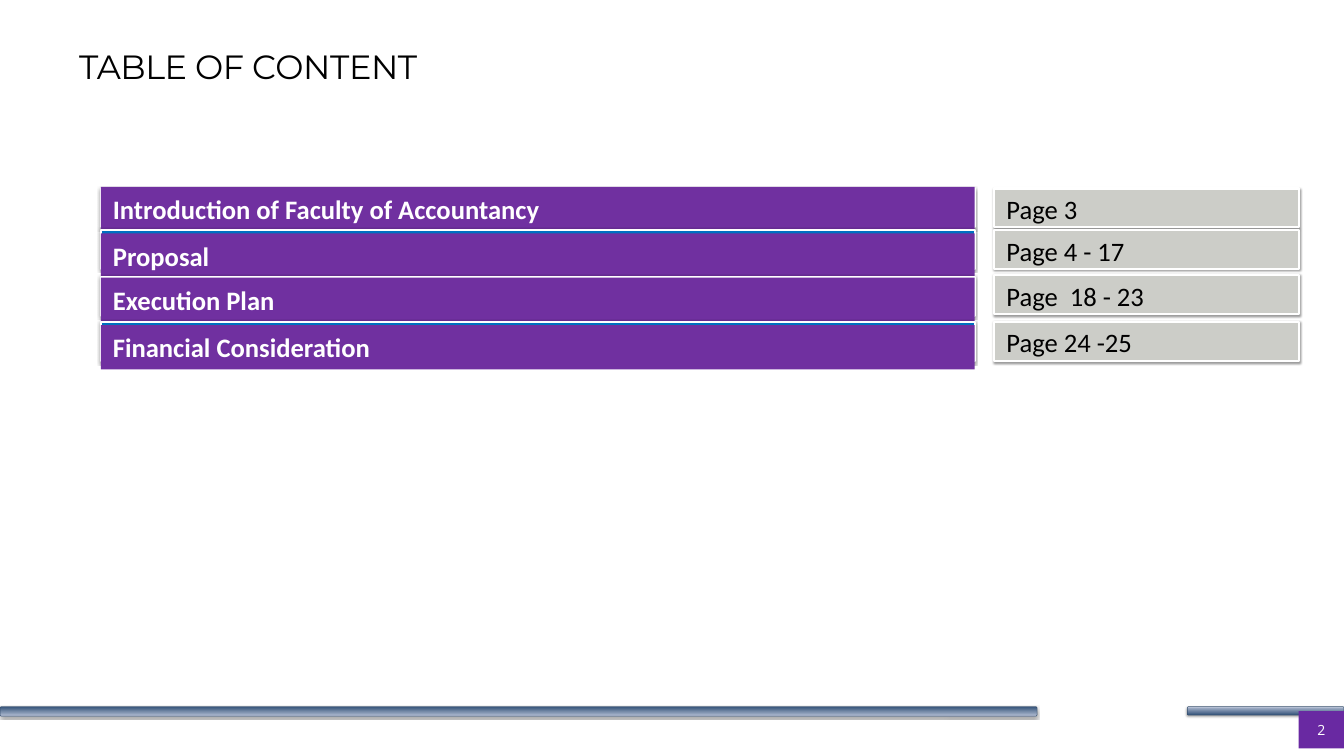
from dataclasses import dataclass

from lxml.etree import SubElement
from pptx import Presentation
from pptx.dml.color import RGBColor
from pptx.enum.shapes import MSO_SHAPE as Shape
from pptx.enum.text import MSO_ANCHOR as Anchor, MSO_AUTO_SIZE as AutoSize, PP_ALIGN as Align
from pptx.oxml.ns import qn
from pptx.util import Pt

PX = 9144  # 100 px to the inch


@dataclass(frozen=True)
class Theme:
    purple: str = "7030A0"
    badge: str = "6929A2"
    blue: str = "0070C0"
    grey: str = "CCCDC8"
    white: str = "FFFFFF"
    black: str = "000000"
    bar_dark: str = "325178"
    bar_light: str = "B4BFD4"
    bar_edge: str = "37506F"
    title_font: str = "Montserrat"
    body_font: str = "Calibri"
    number_font: str = "Open Sans"
    title_size: int = 48
    body_size: int = 38
    number_size: int = 20


theme = Theme()
color = RGBColor.from_string

deck = Presentation()
deck.slide_width, deck.slide_height = 2667 * PX, 1500 * PX
page = deck.slides.add_slide(deck.slide_layouts[5])


def add_box(bounds, fill=None, edge=None, edge_width=3, shadow=None, kind=Shape.RECTANGLE):
    """Add a shape; shadow is (opacity in percent, distance in EMU)."""
    box = page.shapes.add_shape(kind, *(value * PX for value in bounds))
    box.shadow.inherit = False
    if fill:
        box.fill.solid()
        box.fill.fore_color.rgb = color(fill)
    else:
        box.fill.background()
    if edge:
        box.line.color.rgb = color(edge)
        box.line.width = Pt(edge_width)
    else:
        box.line.fill.background()
    if shadow:
        opacity, distance = shadow
        effects = box._element.spPr.find(qn("a:effectLst"))
        outer = SubElement(effects, qn("a:outerShdw"), blurRad="40000", dist=str(distance),
                           dir="5400000", rotWithShape="0")
        tint = SubElement(outer, qn("a:srgbClr"), val=theme.black)
        SubElement(tint, qn("a:alpha"), val=str(opacity * 1000))
    return box


def write(box, text, size, font, ink, bold=False, align=Align.LEFT,
          anchor=Anchor.MIDDLE, margins=(24, 12), fit=AutoSize.SHAPE_TO_FIT_TEXT):
    frame = box.text_frame
    frame.text = text
    frame.word_wrap = True
    frame.auto_size = fit
    frame.vertical_anchor = anchor
    frame.margin_left = frame.margin_right = margins[0] * PX
    frame.margin_top = frame.margin_bottom = margins[1] * PX
    para = frame.paragraphs[0]
    para.alignment = align
    span = para.runs[0]
    span.font.size, span.font.name, span.font.bold = Pt(size), font, bold
    span.font.color.rgb = color(ink)
    return span


# Footer bars
for bounds, flipped in (((0, 1402, 2058, 19), False), ((2356, 1402, 311, 17), True)):
    bar = add_box(bounds, theme.bar_dark, theme.bar_edge, 0.75, (35, 23000),
                  Shape.ROUNDED_RECTANGLE)
    bar.fill.gradient()
    bar.fill.gradient_angle = 90
    for stop, tone in zip(bar.fill.gradient_stops, (theme.bar_dark, theme.bar_light)):
        stop.color.rgb = color(tone)
    bar.rotation = 180
    if flipped:
        bar._element.spPr.xfrm.set("flipV", "1")

# Title
title = page.shapes.title
title.left, title.top, title.width, title.height = (v * PX for v in (133, 0, 1889, 183))
title_span = write(title, "TABLE OF CONTENT", theme.title_size, theme.title_font,
                   theme.black, anchor=Anchor.BOTTOM, fit=AutoSize.NONE)
title_span.font._element.set("spc", "-60")

# Contents: topic, pages, then the tops of backing, topic, page panel and page label
rows = (
    ("Introduction of Faculty of Accountancy", "Page 3", 374, 371, 374, 371),
    ("Proposal", "Page 4 - 17", 456, 463, 456, 453),
    ("Execution Plan", "Page  18 - 23", 549, 551, 546, 543),
    ("Financial Consideration", "Page 24 -25", 639, 645, 639, 634),
)
topic_left, topic_width = 200, 1734
pages_left, pages_width = 1973, 605
panel_height, label_height = 77, 88
panel_style = dict(edge=theme.white, shadow=(38, 20000))

for topic, pages, backing_top, topic_top, panel_top, label_top in rows:
    add_box((topic_left, backing_top, topic_width, panel_height), theme.blue, **panel_style)
    add_box((pages_left, panel_top, pages_width, panel_height), theme.grey, **panel_style)
    topic_box = add_box((topic_left, topic_top, topic_width, label_height), theme.purple)
    write(topic_box, topic, theme.body_size, theme.body_font, theme.white, bold=True)
    label = page.shapes.add_textbox(pages_left * PX, label_top * PX,
                                    pages_width * PX, label_height * PX)
    write(label, pages, theme.body_size, theme.body_font, theme.black)

# Page number
badge = add_box((2577, 1411, 90, 74), theme.badge)
write(badge, "2", theme.number_size, theme.number_font, theme.white,
      align=Align.CENTER, margins=(0, 20))

deck.save("out.pptx")
